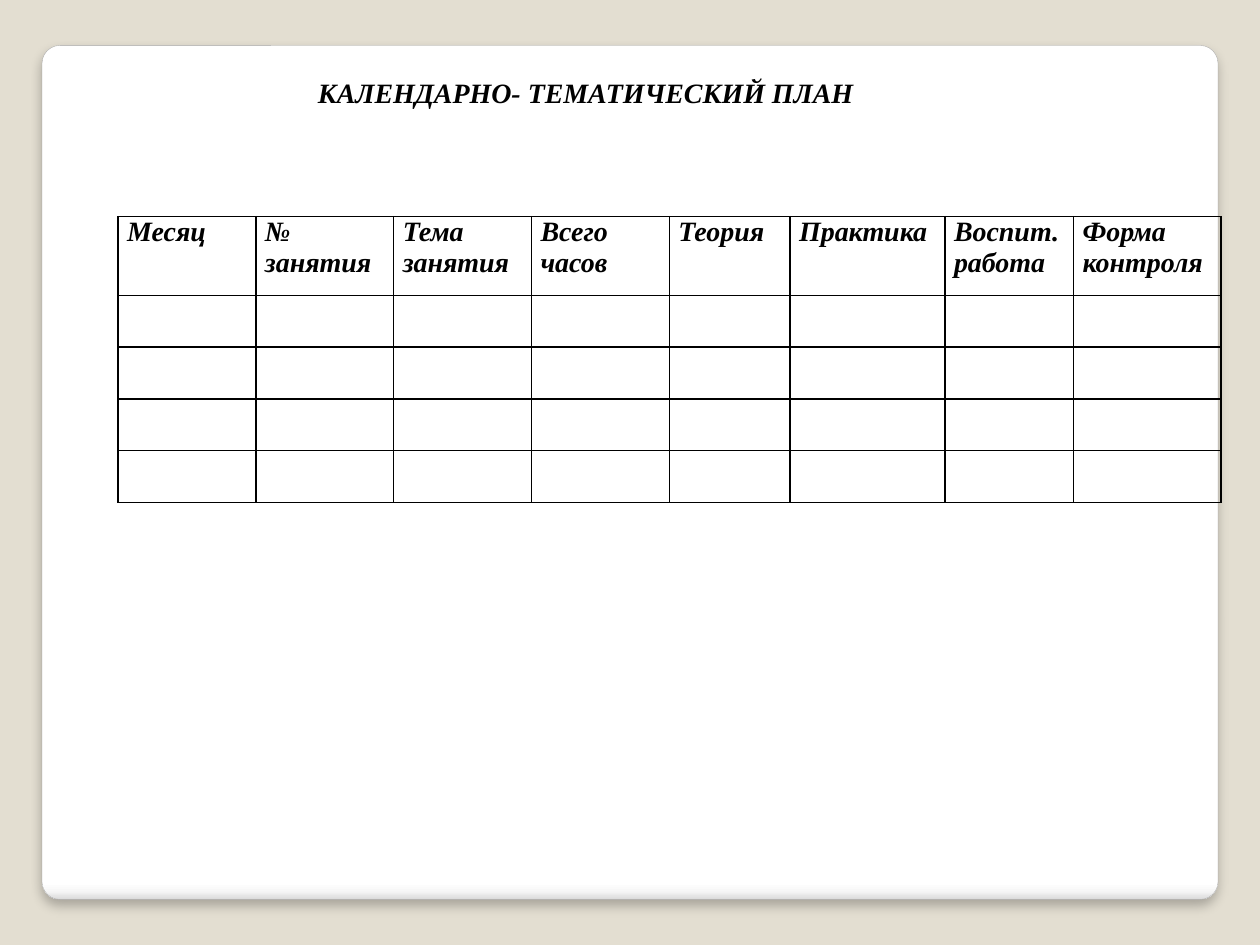
from lxml import etree
from pptx import Presentation
from pptx.dml.color import RGBColor
from pptx.enum.shapes import MSO_SHAPE
from pptx.enum.text import MSO_ANCHOR, PP_ALIGN
from pptx.oxml import parse_xml
from pptx.oxml.ns import nsdecls, qn
from pptx.util import Pt

ROUNDED = MSO_SHAPE.ROUNDED_RECTANGLE
TOP = MSO_ANCHOR.TOP
LEFT, CENTER = PP_ALIGN.LEFT, PP_ALIGN.CENTER
TITLE_ONLY_LAYOUT = 5

COLORS = {
    "background": "E3DED1",
    "card": "FFFFFF",
    "card_shade": "F7F7F7",
    "card_edge": "DADADA",
    "card_line": "A4A4A4",
    "ink": "000000",
}
CARD_STOPS = [(0, "card"), (98, "card"), (99, "card_shade"), (100, "card_edge")]

HEADERS = [
    "Месяц", "№ занятия", "Тема\nзанятия", "Всего\nчасов",
    "Теория", "Практика", "Воспит.\nработа", "Форма\nконтроля",
]
COLUMN_WIDTHS = [78.75, 78.75, 78.75, 78.75, 69, 88.5, 73.5, 84.25]
HEADER_HEIGHT, ROW_HEIGHT, EMPTY_ROWS = 45, 29.6, 4


def rgb(name):
    return RGBColor.from_string(COLORS[name])


def write_text(frame, text, size=16, bold=True, italic=True,
               font="Times New Roman", color="ink", align=LEFT):
    """Fill a text frame, one paragraph for each line of text."""
    frame.text = text
    for paragraph in frame.paragraphs:
        paragraph.alignment = align
        for run in paragraph.runs:
            run.font.size = Pt(size)
            run.font.bold = bold
            run.font.italic = italic
            run.font.name = font
            run.font.color.rgb = rgb(color)


def add_card(slide):
    """Add the rounded panel with its shaded lower edge and soft shadow."""
    card = slide.shapes.add_shape(ROUNDED, Pt(24), Pt(26), Pt(672), Pt(488))
    card.adjustments[0] = 0.021
    card.line.color.rgb = rgb("card_line")
    card.line.width = Pt(0.16)
    stops = "".join(
        f'<a:gs pos="{position * 1000}"><a:srgbClr val="{COLORS[name]}"/></a:gs>'
        for position, name in CARD_STOPS
    )
    gradient = parse_xml(
        f'<a:gradFill {nsdecls("a")} rotWithShape="1"><a:gsLst>{stops}</a:gsLst>'
        '<a:lin ang="5400000" scaled="0"/></a:gradFill>'
    )
    shadow = parse_xml(
        f'<a:effectLst {nsdecls("a")}><a:outerShdw blurRad="{Pt(6)}" '
        f'dist="{Pt(4)}" dir="5400000" algn="t" rotWithShape="0">'
        f'<a:srgbClr val="{COLORS["ink"]}"><a:alpha val="25000"/></a:srgbClr>'
        '</a:outerShdw></a:effectLst>'
    )
    properties = card.element.spPr
    properties.find(qn("a:prstGeom")).addnext(gradient)
    properties.find(qn("a:ln")).addnext(shadow)


def format_title(title, text):
    title.left, title.top = Pt(157.5), Pt(39.6)
    title.width, title.height = Pt(354.5), Pt(48.4)
    frame = title.text_frame
    frame.word_wrap = True
    frame.vertical_anchor = TOP
    write_text(frame, text, align=CENTER)


def add_borders(cell, color="ink", width=1):
    properties = cell._tc.get_or_add_tcPr()
    for side in ("lnL", "lnR", "lnT", "lnB"):
        border = etree.SubElement(properties, qn(f"a:{side}"), w=str(Pt(width)))
        fill = etree.SubElement(border, qn("a:solidFill"))
        etree.SubElement(fill, qn("a:srgbClr"), val=COLORS[color])


def add_plan_table(slide):
    row_heights = [HEADER_HEIGHT] + [ROW_HEIGHT] * EMPTY_ROWS
    table = slide.shapes.add_table(
        len(row_heights), len(HEADERS), Pt(67.5), Pt(123.8),
        Pt(sum(COLUMN_WIDTHS)), Pt(sum(row_heights)),
    ).table
    table.first_row = table.horz_banding = False
    for column, width in zip(table.columns, COLUMN_WIDTHS):
        column.width = Pt(width)
    for row, height in zip(table.rows, row_heights):
        row.height = Pt(height)
    for cell in table.iter_cells():
        cell.margin_left = cell.margin_right = Pt(5.2)
        cell.margin_top = cell.margin_bottom = 0
        add_borders(cell)
        cell.fill.background()
    for cell, header in zip(table.rows[0].cells, HEADERS):
        write_text(cell.text_frame, header)


def main():
    presentation = Presentation()
    presentation.slide_width, presentation.slide_height = Pt(720), Pt(540)
    slide = presentation.slides.add_slide(
        presentation.slide_layouts[TITLE_ONLY_LAYOUT])
    background = slide.background.fill
    background.solid()
    background.fore_color.rgb = rgb("background")

    title = slide.shapes.title
    add_card(slide)
    add_plan_table(slide)
    format_title(title, "КАЛЕНДАРНО- ТЕМАТИЧЕСКИЙ ПЛАН")
    slide.shapes._spTree.append(title.element)  # bring the title to the front
    presentation.save("out.pptx")


if __name__ == "__main__":
    main()
